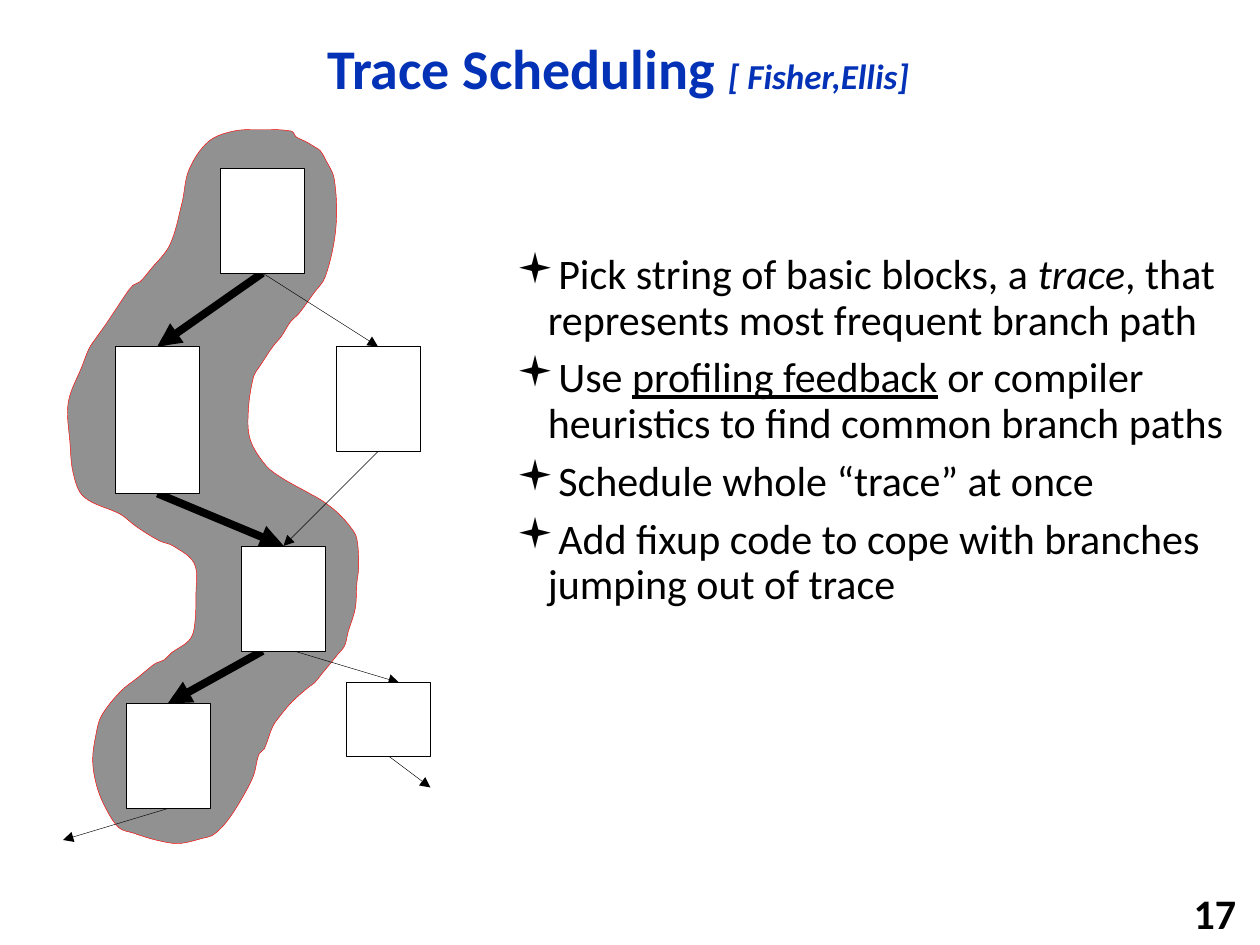
"""Build the Trace Scheduling slide: a control-flow graph beside four bullets."""
from math import dist
from lxml.etree import SubElement
from pptx import Presentation
from pptx.dml.color import RGBColor
from pptx.enum.shapes import MSO_CONNECTOR as Connector, MSO_SHAPE as Shape
from pptx.enum.text import MSO_ANCHOR as Anchor, PP_ALIGN as Align
from pptx.oxml.ns import qn
from pptx.util import Pt

COLORS = {"title": "0332B7", "ink": "000000", "block": "FFFFFF",
          "trace": "919191", "trace_edge": "FF0000"}
FONT = "Calibri"
THIN, THICK = 0.25, 4.5

TITLE = [("Trace Scheduling ", 32, "b"), ("[ Fisher,Ellis]", 20, "bi")]
PAGE_NUMBER = [("17", 24, "b")]
BULLETS = [
    [("Pick string of basic blocks, a ", 24, ""), ("trace", 24, "i"),
     (", that represents most frequent branch path", 24, "")],
    [("Use ", 24, ""), ("profiling feedback", 24, "u"),
     (" or compiler heuristics to find common branch paths", 24, "")],
    [("Schedule whole “trace” at once", 24, "")],
    [("Add fixup code to cope with branches jumping out of trace", 24, "")],
]

BLOCK_WIDTH = 48
BLOCKS = [(66, 198, 84), (192, 198, 60), (126, 96, 60),
          (138, 312, 60), (72, 402, 60), (198, 390, 42)]
TRACE_BRANCHES = [((150, 156), (90, 198)), ((90, 282), (162, 312)),
                  ((150, 372), (96, 402))]
SIDE_BRANCHES = [((150, 156), (216, 198)), ((216, 258), (162, 312)),
                 ((168, 372), (228, 390)), ((222, 432), (246, 450)),
                 ((96, 462), (36, 480))]
TRACE_OUTLINE = [
    (204, 333), (203, 348), (199, 361), (197, 369), (193, 374), (189, 379),
    (184, 385), (180, 390), (176, 393), (167, 401), (161, 408), (156, 415),
    (151, 428), (148, 431), (145, 443), (139, 455), (130, 469), (122, 477),
    (116, 479), (102, 482), (89, 480), (76, 476), (68, 473), (60, 461),
    (55, 448), (53, 434), (55, 419), (58, 409), (69, 395), (79, 387),
    (85, 382), (89, 379), (94, 377), (98, 373), (108, 366), (111, 359),
    (112, 339), (111, 322), (99, 312), (91, 309), (78, 301), (69, 294),
    (48, 284), (42, 271), (40, 253), (39, 230), (47, 209),
    (51, 199), (55, 193), (60, 186), (68, 174), (72, 168), (76, 163),
    (80, 161), (86, 154), (97, 140), (104, 116), (108, 97), (119, 81),
    (133, 75), (149, 74), (167, 75), (169, 78), (175, 81),
    (180, 84), (183, 86), (186, 91), (191, 102), (192, 130), (186, 158),
    (179, 168), (171, 179), (166, 184), (161, 192), (156, 198), (150, 207),
    (148, 210), (145, 215), (142, 234), (143, 251), (152, 266),
    (161, 273), (177, 282), (184, 286), (193, 293), (201, 302), (204, 308),
    (205, 324),
]


def color(name):
    return RGBColor.from_string(COLORS[name])


def paint(shape, fill, edge):
    shape.shadow.inherit = False
    shape.fill.solid()
    shape.fill.fore_color.rgb = color(fill)
    shape.line.color.rgb = color(edge)
    shape.line.width = Pt(THIN)


def handle(knots, i, reach):
    """Return the point at a distance from knot i along its tangent."""
    before, here, after = knots[i - 1], knots[i], knots[(i + 1) % len(knots)]
    ratio = reach / dist(before, after)
    return tuple(h + ratio * (a - b) for b, h, a in zip(before, here, after))


def add_closed_curve(shapes, knots):
    builder = shapes.build_freeform(*map(Pt, knots[0]))
    builder.add_line_segments(
        [tuple(map(Pt, knot)) for knot in knots[1:] + knots[:1]], close=True)
    curve = builder.convert_to_shape()
    left, top = map(min, zip(*knots))
    for i, segment in enumerate(list(curve._element.iter(qn("a:lnTo")))):
        following = (i + 1) % len(knots)
        reach = dist(knots[i], knots[following]) / 3
        segment.tag = qn("a:cubicBezTo")
        controls = handle(knots, i, reach), handle(knots, following, -reach)
        for spot, (x, y) in enumerate(controls):
            point = SubElement(segment, qn("a:pt"),
                               x=str(Pt(x - left)), y=str(Pt(y - top)))
            segment.insert(spot, point)
    return curve


def add_text(shapes, box, paragraphs, ink, align, spacing, bulleted=False):
    frame = shapes.add_textbox(*map(Pt, box)).text_frame
    frame.word_wrap = True
    frame.vertical_anchor = Anchor.MIDDLE
    for i, runs in enumerate(paragraphs):
        paragraph = frame.add_paragraph() if i else frame.paragraphs[0]
        paragraph.alignment = align
        paragraph.line_spacing = spacing
        if bulleted:
            paragraph.space_before = Pt(7.2)
            props = paragraph._p.get_or_add_pPr()
            props.set("marL", str(Pt(18)))
            props.set("indent", str(Pt(-18)))
            SubElement(props, qn("a:buFont"), typeface="Wingdings")
            SubElement(props, qn("a:buChar"), char="▪")
        for words, size, style in runs:
            run = paragraph.add_run()
            run.text = words
            font = run.font
            font.name, font.size = FONT, Pt(size)
            font.color.rgb = color(ink)
            font.bold, font.italic = "b" in style, "i" in style
            font.underline = "u" in style


def add_arrow(shapes, branch, width):
    start, end = branch
    arrow = shapes.add_connector(Connector.STRAIGHT, *map(Pt, start + end))
    arrow.line.color.rgb = color("ink")
    arrow.line.width = Pt(width)
    SubElement(arrow.line._get_or_add_ln(), qn("a:tailEnd"), type="triangle")
    SubElement(arrow._element.spPr, qn("a:effectLst"))


def main():
    deck = Presentation()
    deck.slide_width, deck.slide_height = Pt(720), Pt(540)
    shapes = deck.slides.add_slide(deck.slide_layouts[6]).shapes

    add_text(shapes, (66, 12, 574.5, 58), [TITLE], "title", Align.CENTER, 0.9)
    add_text(shapes, (563.5, 510, 150, 23), [PAGE_NUMBER], "ink",
             Align.RIGHT, 1.0)
    add_text(shapes, (288, 137.5, 432, 217.5), BULLETS, "ink",
             Align.LEFT, 0.9, bulleted=True)

    paint(add_closed_curve(shapes, TRACE_OUTLINE), "trace", "trace_edge")

    for branch in TRACE_BRANCHES:
        add_arrow(shapes, branch, THICK)
    graph = shapes.add_group_shape().shapes
    for branch in TRACE_BRANCHES + SIDE_BRANCHES:
        add_arrow(graph, branch, THIN)
    for left, top, height in BLOCKS:
        block = graph.add_shape(Shape.RECTANGLE,
                                *map(Pt, (left, top, BLOCK_WIDTH, height)))
        paint(block, "block", "ink")

    deck.save("out.pptx")


if __name__ == "__main__":
    main()
